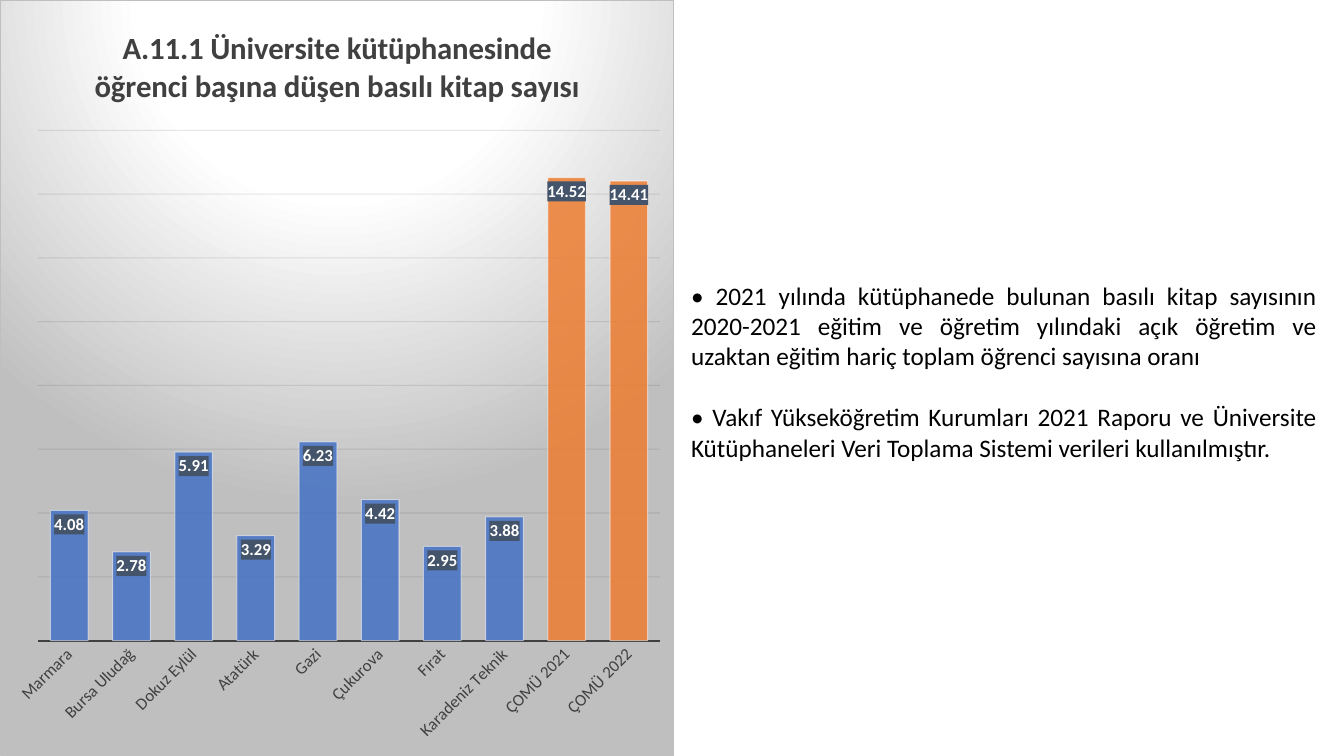
from lxml import etree
from pptx import Presentation
from pptx import util as u
from pptx.chart import data
from pptx.dml import color
from pptx.enum import chart as ch
from pptx.enum import text
from pptx.oxml import ns, parse_xml

EMU_PER_PX = 12192000 / 1344
HEADING = "A.11.1 Üniversite kütüphanesinde öğrenci başına düşen basılı kitap sayısı"
BOOKS_PER_STUDENT = {
    "Marmara": 4.08, "Bursa Uludağ": 2.78, "Dokuz Eylül": 5.91, "Atatürk": 3.29,
    "Gazi": 6.23, "Çukurova": 4.42, "Fırat": 2.95, "Karadeniz Teknik": 3.88,
    "ÇOMÜ 2021": 14.52, "ÇOMÜ 2022": 14.41,
}
NOTES = [
    "• 2021 yılında kütüphanede bulunan basılı kitap sayısının 2020-2021 eğitim ve öğretim "
    "yılındaki açık öğretim ve uzaktan eğitim hariç toplam öğrenci sayısına oranı",
    "• Vakıf Yükseköğretim Kurumları 2021 Raporu ve Üniversite Kütüphaneleri Veri Toplama "
    "Sistemi verileri kullanılmıştır.",
]


def paint(fill, hex_color, opacity=100):
    fill.solid()
    fill.fore_color.rgb = color.RGBColor.from_string(hex_color)
    if opacity < 100:
        rgb = fill._xPr.find(".//" + ns.qn("a:srgbClr"))
        etree.SubElement(rgb, ns.qn("a:alpha"), val=str(opacity * 1000))


def style(font, size, hex_color, bold=False):
    font.name = "Calibri"
    font.size = u.Pt(size)
    font.bold = bold
    paint(font.fill, hex_color)


prs = Presentation()
prs.slide_width, prs.slide_height = [round(n * EMU_PER_PX) for n in (1344, 756)]
slide = prs.slides.add_slide(prs.slide_layouts[1])
title, body = slide.placeholders
title.element.getparent().remove(title.element)

# Chart with its title
chart_data = data.CategoryChartData(number_format="0.00")
chart_data.categories = list(BOOKS_PER_STUDENT)
chart_data.add_series(HEADING, list(BOOKS_PER_STUDENT.values()))
chart_box = [round(n * EMU_PER_PX) for n in (0, 0, 674, 756)]
chart = slide.shapes.add_chart(ch.XL_CHART_TYPE.COLUMN_CLUSTERED, *chart_box, chart_data).chart
style(chart.font, 10, "000000")
chart.has_legend = False
heading = chart.chart_title.text_frame.paragraphs[0].add_run()
heading.text = HEADING
style(heading.font, 22, "404040", True)
chart.chart_title.include_in_layout = False

# Radial background
stops = "".join(
    f'<a:gs pos="{at * 1000}"><a:srgbClr val="{shade}"/></a:gs>'
    for at, shade in ((0, "FFFFFF"), (39, "FFFFFF"), (100, "BFBFBF"))
)
background = parse_xml(
    f'<c:spPr {ns.nsdecls("c", "a")}><a:gradFill><a:gsLst>{stops}</a:gsLst><a:path path="circle">'
    '<a:fillToRect l="50000" t="-80000" r="50000" b="180000"/></a:path></a:gradFill>'
    '<a:ln w="9525"><a:solidFill><a:srgbClr val="BFBFBF"/></a:solidFill></a:ln></c:spPr>'
)
chart._chartSpace.chart.addnext(background)

# Plot area inside the chart
plot_area = chart._chartSpace.chart.plotArea
for old_layout in plot_area.findall(ns.qn("c:layout")):
    plot_area.remove(old_layout)
plot_area.insert(0, parse_xml(
    f'<c:layout {ns.nsdecls("c")}><c:manualLayout><c:layoutTarget val="inner"/>'
    '<c:xMode val="edge"/><c:yMode val="edge"/><c:x val="0.056"/><c:y val="0.172"/>'
    '<c:w val="0.924"/><c:h val="0.676"/></c:manualLayout></c:layout>'
))

# Axes
universities = chart.category_axis
universities.major_tick_mark = ch.XL_TICK_MARK.NONE
style(universities.tick_labels.font, 12, "404040")
universities._element.txPr.bodyPr.set("rot", "-2700000")
paint(universities.format.line.fill, "404040")
universities.format.line.width = u.Pt(1.5)

books = chart.value_axis
books.visible = False
books.minimum_scale, books.maximum_scale, books.major_unit = 0, 16, 2
books.has_major_gridlines = True
paint(books.major_gridlines.format.line.fill, "0D0D0D", 10)
books.major_gridlines.format.line.width = u.Pt(0.75)

# Columns, the last two highlighted
plot = chart.plots[0]
plot.gap_width = 65
plot.vary_by_categories = False
ratio = plot.series[0]
highlights = [ratio.points[i].format for i in (8, 9)]
for columns, hue in zip([ratio.format, *highlights], ("4472C4", "ED7D31", "ED7D31")):
    paint(columns.fill, hue, 85)
    paint(columns.line.fill, "FFFFFF", 50)
    columns.line.width = u.Pt(0.75)

labels = ratio.data_labels
labels.show_value = True
labels.number_format = "0.00"
labels.number_format_is_linked = False
labels.position = ch.XL_LABEL_POSITION.INSIDE_END
style(labels.font, 12, "FFFFFF", True)
labels._element.find(ns.qn("c:txPr")).addprevious(parse_xml(
    f'<c:spPr {ns.nsdecls("c", "a")}><a:solidFill><a:srgbClr val="44546A"/></a:solidFill></c:spPr>'
))

# Notes beside the chart
body.left, body.top, body.width, body.height = [
    round(n * EMU_PER_PX) for n in (681, 275, 646, 194)
]
frame = body.text_frame
frame.word_wrap = True
frame.auto_size = text.MSO_AUTO_SIZE.NONE
frame.vertical_anchor = text.MSO_ANCHOR.TOP
for i, note in enumerate(NOTES):
    paragraph = frame.add_paragraph() if i else frame.paragraphs[0]
    paragraph.alignment = text.PP_ALIGN.JUSTIFY
    paragraph.line_spacing = 1.0
    paragraph.space_before = u.Pt(22 if i else 0)
    layout = paragraph._p.get_or_add_pPr()
    layout.set("marL", "0")
    layout.set("indent", "0")
    etree.SubElement(layout, ns.qn("a:buNone"))
    run = paragraph.add_run()
    run.text = note
    style(run.font, 18, "000000")

prs.save("out.pptx")
